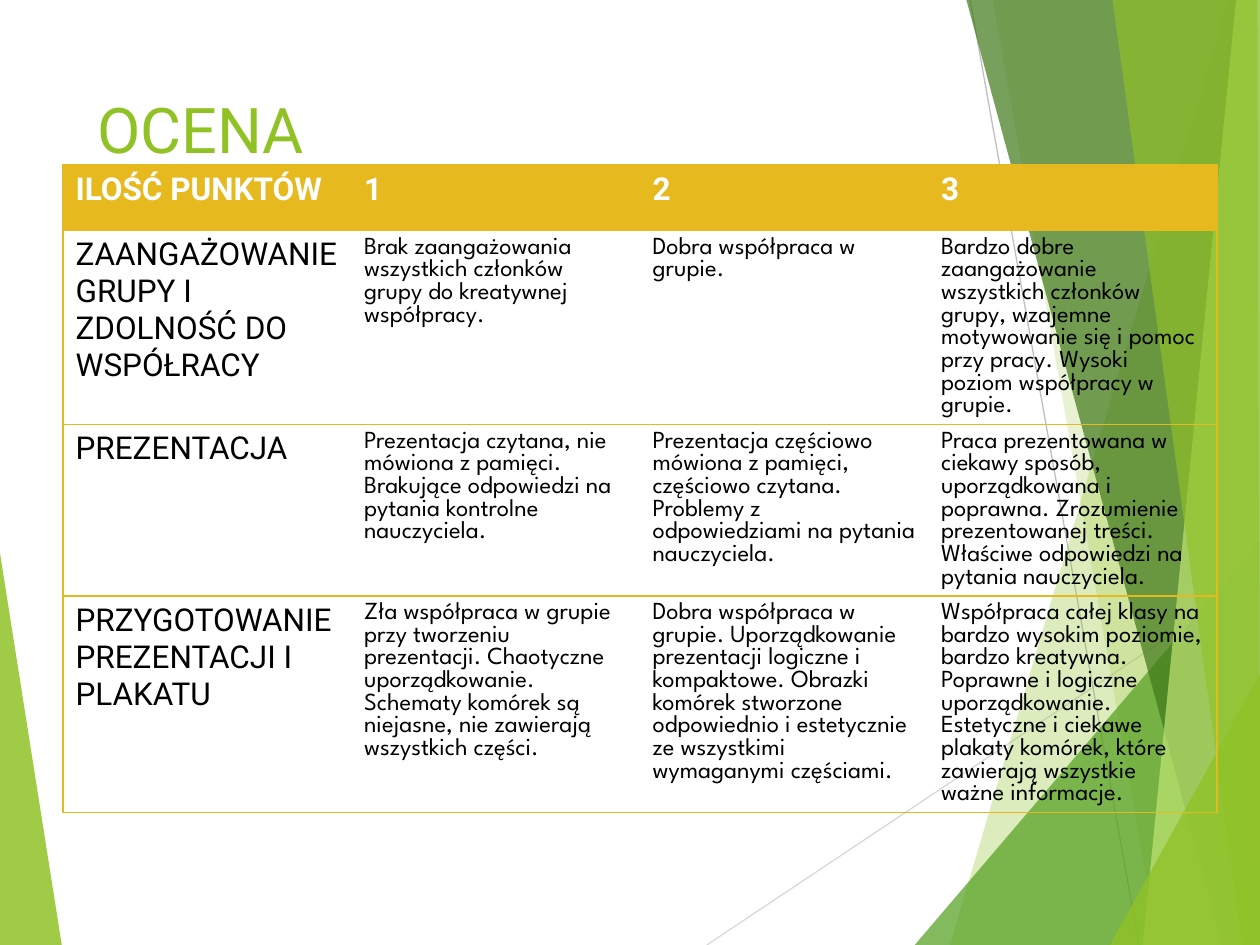
import pptx
import pptx.dml.color
import pptx.enum.shapes
import pptx.enum.text
import pptx.oxml
import pptx.oxml.ns
import pptx.util
from lxml import etree
from pptx.util import Inches

COLORS = {
    "green": "90C226",
    "mid_green": "54A021",
    "dark_green": "3F7819",
    "pale_green": "C0E474",
    "light_gray": "D9D9D9",
    "gray": "BFBFBF",
    "gold": "E6B91E",
    "white": "FFFFFF",
    "black": "000000",
}
HEADING_FONT = "Roboto"
BODY_FONT = "League Spartan"
NO_STYLE = "{2D5ABB26-0587-4C30-8999-92F81FD0307C}"

LEFT_FACET = ([(0, 4.39), (0.49, 7.5), (0, 7.5)], "green", 85)
LINES = [
    ((5.61, 7.5), (10, 4.57), "light_gray"),
    ((7.7, 0), (9.04, 7.5), "gray"),
]
RIGHT_FACETS = [
    ([(9.75, 0), (7.54, 7.5), (10, 7.5), (10, 0)], "green", 30),
    ([(7.88, 0), (9.19, 7.5), (10, 7.5), (10, 0)], "green", 20),
    ([(7.26, 7.5), (10, 4.29), (10, 7.5)], "mid_green", 72),
    ([(7.67, 0), (9.7, 7.5), (10, 7.5), (10, 0)], "dark_green", 70),
    ([(9.81, 0), (9.07, 7.5), (10, 7.5), (10, 0)], "pale_green", 70),
    ([(8.83, 0), (9.86, 7.5), (10, 7.5), (9.98, 0)], "green", 65),
    ([(8.81, 7.5), (10, 5.35), (10, 7.5)], "green", 80),
]

ROW_HEIGHTS = [0.52, 1.54, 1.36, 1.72]
COLUMN_WIDTH = 2.29
RUBRIC = [
    ["ILOŚĆ PUNKTÓW", "1", "2", "3"],
    [
        "ZAANGAŻOWANIE GRUPY I ZDOLNOŚĆ DO WSPÓŁRACY",
        "Brak zaangażowania wszystkich członków grupy do kreatywnej współpracy.",
        "Dobra współpraca w grupie.",
        "Bardzo dobre zaangażowanie wszystkich członków grupy, wzajemne motywowanie się "
        "i pomoc przy pracy. Wysoki poziom współpracy w grupie.",
    ],
    [
        "PREZENTACJA",
        "Prezentacja czytana, nie mówiona z pamięci. Brakujące odpowiedzi na pytania "
        "kontrolne nauczyciela.",
        "Prezentacja częściowo mówiona z pamięci, częściowo czytana. Problemy z "
        "odpowiedziami na pytania nauczyciela.",
        "Praca prezentowana w ciekawy sposób, uporządkowana i poprawna. Zrozumienie "
        "prezentowanej treści. Właściwe odpowiedzi na pytania nauczyciela.",
    ],
    [
        "PRZYGOTOWANIE PREZENTACJI I PLAKATU",
        "Zła współpraca w grupie przy tworzeniu prezentacji. Chaotyczne uporządkowanie. "
        "Schematy komórek są niejasne, nie zawierają wszystkich części.",
        "Dobra współpraca w grupie. Uporządkowanie prezentacji logiczne i kompaktowe. "
        "Obrazki komórek stworzone odpowiednio i estetycznie ze wszystkimi wymaganymi "
        "częściami.",
        "Współpraca całej klasy na bardzo wysokim poziomie, bardzo kreatywna. Poprawne "
        "i logiczne uporządkowanie. Estetyczne i ciekawe plakaty komórek, które "
        "zawierają wszystkie ważne informacje.",
    ],
]


def rgb(name):
    return pptx.dml.color.RGBColor.from_string(COLORS[name])


def write_text(text_frame, text, size=18, font=HEADING_FONT, color="black", bold=False):
    paragraph = text_frame.paragraphs[0]
    paragraph.alignment = pptx.enum.text.PP_ALIGN.LEFT
    run = paragraph.add_run()
    run.text = text
    run.font.size = pptx.util.Pt(size)
    run.font.name = font
    run.font.bold = bold
    run.font.color.rgb = rgb(color)


def add_facet(slide, points, color, opacity):
    corners = [(Inches(x), Inches(y)) for x, y in points]
    builder = slide.shapes.build_freeform(*corners[0])
    builder.add_line_segments(corners[1:], close=True)
    shape = builder.convert_to_shape()
    shape.shadow.inherit = False
    shape.fill.solid()
    shape.fill.fore_color.rgb = rgb(color)
    shape.line.fill.background()
    color_element = shape.element.spPr.find(".//" + pptx.oxml.ns.qn("a:srgbClr"))
    alpha = etree.SubElement(color_element, pptx.oxml.ns.qn("a:alpha"))
    alpha.set("val", str(opacity * 1000))


def add_line(slide, start, end, color):
    connector = slide.shapes.add_connector(
        pptx.enum.shapes.MSO_CONNECTOR.STRAIGHT, *map(Inches, start + end)
    )
    connector.line.color.rgb = rgb(color)
    connector.line.width = pptx.util.Pt(0.75)
    etree.SubElement(connector.element.spPr, pptx.oxml.ns.qn("a:effectLst"))


def add_title(slide, text):
    title = slide.shapes.title
    title.left, title.top = Inches(0.67), Inches(0.67)
    title.width, title.height = Inches(6.94), Inches(1.44)
    title.text_frame.vertical_anchor = pptx.enum.text.MSO_ANCHOR.TOP
    title.text_frame.word_wrap = True
    write_text(title.text_frame, text, size=36, color="green")
    title.element.getparent().append(title.element)


def add_border(cell, side):
    properties = cell._tc.get_or_add_tcPr()
    border = etree.SubElement(properties, pptx.oxml.ns.qn("a:ln" + side), w="12700")
    fill = etree.SubElement(border, pptx.oxml.ns.qn("a:solidFill"))
    etree.SubElement(fill, pptx.oxml.ns.qn("a:srgbClr"), val=COLORS["gold"])


def fill_cell(cell, text, is_header, is_first, is_last):
    sides = ["L"] * is_first + ["R"] * is_last + ["T", "B"]
    for side in sides:
        add_border(cell, side)
    if is_header:
        cell.fill.solid()
        cell.fill.fore_color.rgb = rgb("gold")
        write_text(cell.text_frame, text, color="white", bold=True)
    else:
        cell.fill.background()
        if is_first:
            write_text(cell.text_frame, text)
        else:
            write_text(cell.text_frame, text, size=14, font=BODY_FONT)


def add_rubric(slide):
    column_count = len(RUBRIC[0])
    frame = slide.shapes.add_table(
        len(RUBRIC), column_count, Inches(0.5), Inches(1.31),
        Inches(COLUMN_WIDTH * column_count), Inches(sum(ROW_HEIGHTS)),
    )
    table = frame.table
    table.horz_banding = False
    next(frame.element.iter(pptx.oxml.ns.qn("a:tableStyleId"))).text = NO_STYLE
    for column in table.columns:
        column.width = Inches(COLUMN_WIDTH)
    for row_index, (texts, height) in enumerate(zip(RUBRIC, ROW_HEIGHTS)):
        table.rows[row_index].height = Inches(height)
        for column_index, text in enumerate(texts):
            fill_cell(
                table.cell(row_index, column_index), text,
                is_header=row_index == 0,
                is_first=column_index == 0,
                is_last=column_index == column_count - 1,
            )


def main():
    presentation = pptx.Presentation()
    presentation.slide_width = Inches(10)
    presentation.slide_height = Inches(7.5)
    slide = presentation.slides.add_slide(presentation.slide_layouts[5])
    add_facet(slide, *LEFT_FACET)
    for line in LINES:
        add_line(slide, *line)
    for facet in RIGHT_FACETS:
        add_facet(slide, *facet)
    add_title(slide, "OCENA")
    add_rubric(slide)
    presentation.save("out.pptx")


if __name__ == "__main__":
    main()
